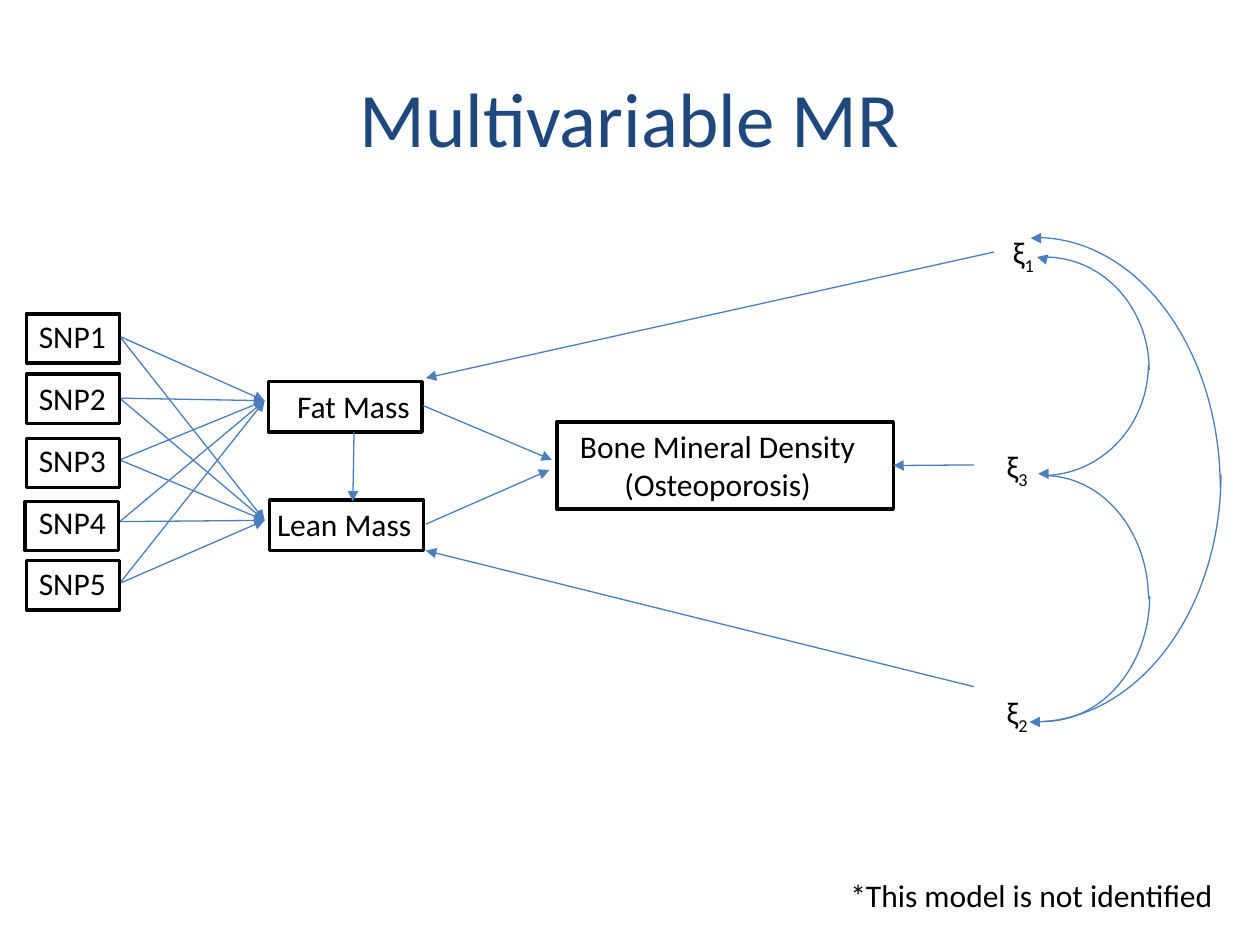
from pptx import Presentation
from pptx.dml.color import RGBColor
from pptx.enum.shapes import MSO_CONNECTOR, MSO_SHAPE
from pptx.enum.text import MSO_ANCHOR, MSO_AUTO_SIZE, PP_ALIGN
from pptx.oxml.ns import qn
from pptx.util import Inches, Pt
from lxml import etree

STRAIGHT = MSO_CONNECTOR.STRAIGHT
ARC, RECTANGLE = MSO_SHAPE.ARC, MSO_SHAPE.RECTANGLE
CENTER, LEFT = PP_ALIGN.CENTER, PP_ALIGN.LEFT
RIGHT_SIDE = 3
COLORS = {"text": "000000", "frame": "000000", "path": "4B7EBC", "title": "1F497D"}
FONT = "Calibri"


def rgb(name):
    """Return the named colour."""
    return RGBColor.from_string(COLORS[name])


def inches(values):
    """Convert a sequence of numbers to lengths."""
    return [Inches(value) for value in values]


def format_font(font, size, color):
    """Apply the slide's font in one size and colour."""
    for attribute, value in {"name": FONT, "size": Pt(size)}.items():
        setattr(font, attribute, value)
    font.color.rgb = rgb(color)


def add_label(slide, box, lines, subscript="", align=LEFT):
    """Write 18 pt lines in a box, with an optional subscript at the end."""
    label = slide.shapes.add_textbox(*inches(box))
    frame = label.text_frame
    settings = {"word_wrap": False, "auto_size": MSO_AUTO_SIZE.SHAPE_TO_FIT_TEXT}
    for attribute, value in settings.items():
        setattr(frame, attribute, value)
    for index, line in enumerate(lines):
        paragraph = frame.add_paragraph() if index else frame.paragraphs[0]
        paragraph.alignment = align
        run = paragraph.add_run()
        run.text = line
        format_font(run.font, 18, "text")
    if subscript:
        run = paragraph.add_run()
        run.text = subscript
        format_font(run.font, 18, "text")
        run._r.get_or_add_rPr().set("baseline", "-25000")
    return label


def add_outline(slide, preset, box, color, width):
    """Draw an unfilled preset shape."""
    outline = slide.shapes.add_shape(preset, *inches(box))
    outline.shadow.inherit = False
    outline.fill.background()
    outline.line.color.rgb = rgb(color)
    outline.line.width = Pt(width)
    return outline


def add_frame(slide, box):
    """Draw the black frame of an observed variable."""
    return add_outline(slide, RECTANGLE, box, "frame", 2)


def add_arrow(slide, start, end, source=None, target=None):
    """Draw an arrow, joined to the right side of its source or target."""
    arrow = slide.shapes.add_connector(STRAIGHT, *inches((*start, *end)))
    if source is not None:
        arrow.begin_connect(source, RIGHT_SIDE)
    if target is not None:
        arrow.end_connect(target, RIGHT_SIDE)
    arrow.line.color.rgb = rgb("path")
    arrow.line.width = Pt(0.75)
    etree.SubElement(arrow.line._get_or_add_ln(), qn("a:tailEnd"), type="triangle")
    etree.SubElement(arrow._element.spPr, qn("a:effectLst"))


def add_arc(slide, box, rotation, flips):
    """Draw a quarter arc, rotated and flipped."""
    arc = add_outline(slide, ARC, box, "path", 0.75)
    arc.rotation = rotation
    for flip in flips:
        arc._element.spPr.xfrm.set(flip, "1")


def add_title(slide, box):
    """Fill and place the title placeholder."""
    title = slide.shapes.title
    for side, value in zip(("left", "top", "width", "height"), inches(box)):
        setattr(title, side, value)
    title.text_frame.text = "Multivariable MR"
    title.text_frame.vertical_anchor = MSO_ANCHOR.MIDDLE
    heading = title.text_frame.paragraphs[0]
    heading.alignment = CENTER
    format_font(heading.runs[0].font, 44, "title")


def add_snps(slide, box, exposure_points):
    """Stack the SNPs and point each at both exposures."""
    left, top, width, pitch = box
    frame_places = ((0.21, 2.49), (0.21, 2.97), (0.21, 3.48), (0.2, 3.98), (0.21, 4.45))
    for index, frame_place in enumerate(frame_places):
        label_top = top + index * pitch
        snp = add_label(slide, (left, label_top, width, 0.4), [f"SNP{index + 1}"])
        for point in exposure_points:
            add_arrow(slide, (left + width, label_top + 0.2), point, source=snp)
        add_frame(slide, (*frame_place, width, 0.39))


def add_exposures(slide, box):
    """Place fat mass and lean mass with their arrows."""
    left, top, width, gap = box
    fat = add_label(slide, (2.26, top - 0.01, 1.1, 0.4), ["Fat Mass"])
    lean = add_label(slide, (2.1, top + gap - 0.01, 1.28, 0.4), ["Lean Mass"])
    add_frame(slide, (left, top, width, 0.4))
    add_frame(slide, (left + 0.01, top + gap, width, 0.4))
    add_arrow(slide, (3.36, 3.23), (4.38, 3.65), source=fat)
    add_arrow(slide, (3.38, 4.16), (4.36, 3.73), source=lean)
    add_arrow(slide, (2.81, 3.43), (2.8, 3.98))


def add_outcome(slide, box):
    """Place the outcome variable and return its frame."""
    lines = ["Bone Mineral Density", "(Osteoporosis)"]
    add_label(slide, (4.49, 3.34, 2.41, 0.71), lines, align=CENTER)
    return add_frame(slide, box)


def add_residuals(slide, outcome):
    """Place the residuals, their paths and their covariances."""
    for left, top, number in ((7.94, 1.8, "1"), (7.89, 5.45, "2"), (7.89, 3.5, "3")):
        add_label(slide, (left, top, 0.38, 0.4), ["ξ"], number)
    add_arrow(slide, (7.89, 2), (3.38, 3))
    add_arrow(slide, (7.73, 5.45), (3.38, 4.37))
    add_arrow(slide, (7.73, 3.69), (7.09, 3.69), target=outcome)

    upper, lower = ("flipV",), ("flipH", "flipV")
    covariance_arcs = (
        ((6.24, 2.41, 3.97, 2.92), 90, ("flipH",)),
        ((6.24, 2.28, 3.93, 2.97), 90, ()),
        ((7.4, 2.11, 1.79, 1.65), 270, upper),
        ((7.39, 2.05, 1.77, 1.68), 270, lower),
        ((7.31, 3.93, 1.96, 1.65), 270, upper),
        ((7.29, 3.89, 1.99, 1.68), 270, lower),
    )
    for arc in covariance_arcs:
        add_arc(slide, *arc)
    for tip_x, tip_y, rise in ((8.23, 2.04, 0.01), (8.18, 1.89, 0), (8.24, 3.76, 0), (8.17, 5.73, 0)):
        add_arrow(slide, (tip_x + 0.04, tip_y + rise), (tip_x, tip_y))


def main():
    """Build the path diagram slide."""
    presentation = Presentation()
    presentation.slide_width, presentation.slide_height = Inches(10), Inches(7.5)
    slide = presentation.slides.add_slide(presentation.slide_layouts[5])
    add_title(slide, (0.5, 0.3, 9, 1.25))
    add_snps(slide, (0.21, 2.47, 0.74, 0.49), ((2.1, 3.18), (2.1, 4.13)))
    add_exposures(slide, (2.13, 3.03, 1.22, 0.94))
    outcome = add_outcome(slide, (4.42, 3.35, 2.67, 0.69))
    add_residuals(slide, outcome)
    add_label(slide, (6.65, 6.9, 3.11, 0.4), ["*This model is not identified"])
    presentation.save("out.pptx")


if __name__ == "__main__":
    main()
